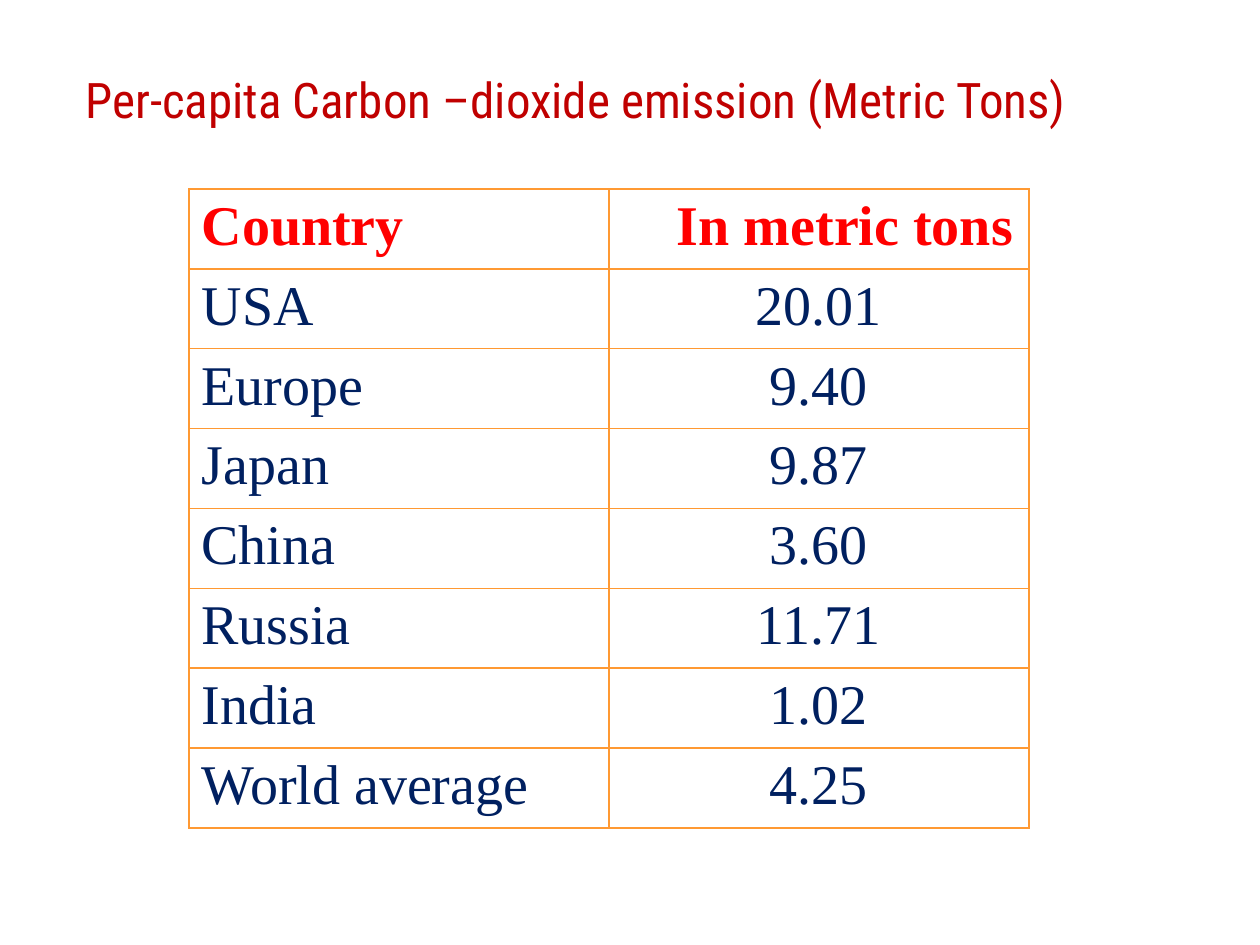
from dataclasses import dataclass
from typing import NamedTuple

from lxml import etree
from pptx import Presentation
from pptx.dml.color import RGBColor
from pptx.enum.text import MSO_AUTO_SIZE, PP_ALIGN
from pptx.oxml.ns import qn
from pptx.util import Emu, Inches, Pt

LEFT, CENTER = PP_ALIGN.LEFT, PP_ALIGN.CENTER
FIT_SHAPE = MSO_AUTO_SIZE.SHAPE_TO_FIT_TEXT
BLANK_LAYOUT = 6
BORDER_SIDES = ("a:lnL", "a:lnR", "a:lnT", "a:lnB")


@dataclass(frozen=True)
class Theme:
    title_font: str = "Roboto Condensed"
    table_font: str = "Times New Roman"
    title_color: str = "C00000"
    header_color: str = "FF0000"
    body_color: str = "002060"
    border_color: str = "FF9933"
    title_size: int = 28
    table_size: int = 32
    border_width: int = 1
    space_before_percent: int = 20


class Area(NamedTuple):
    left: float
    top: float
    width: float
    height: float


class Emission(NamedTuple):
    country: str
    tons: str


class TextStyle(NamedTuple):
    font: str
    size: int
    color: str
    bold: bool = False


THEME = Theme()
TITLE_STYLE = TextStyle(THEME.title_font, THEME.title_size, THEME.title_color)
HEADER_STYLE = TextStyle(THEME.table_font, THEME.table_size, THEME.header_color, True)
BODY_STYLE = TextStyle(THEME.table_font, THEME.table_size, THEME.body_color)

SLIDE_WIDTH, SLIDE_HEIGHT = Inches(10), Inches(7.5)
TITLE_AREA = Area(0.058, 1 / 15, 0.867, 0.076)
TABLE_AREA = Area(0.15, 0.2, 2 / 3, 0.676)
HEADER_INDENT = Inches(0.54)

TITLE = "Per-capita Carbon –dioxide emission (Metric Tons)"
HEADINGS = Emission("Country", "In metric tons")
EMISSIONS = [
    Emission("USA", "20.01"),
    Emission("Europe", "9.40"),
    Emission("Japan", "9.87"),
    Emission("China", "3.60"),
    Emission("Russia", "11.71"),
    Emission("India", "1.02"),
    Emission("World average", "4.25"),
]


def to_lengths(area: Area) -> list[Emu]:
    slide_sides = (SLIDE_WIDTH, SLIDE_HEIGHT) * 2
    return [Emu(round(share * side)) for share, side in zip(area, slide_sides)]


def style_paragraph(paragraph, style: TextStyle, alignment=LEFT) -> None:
    paragraph.alignment = alignment
    for run in paragraph.runs:
        run.font.name = style.font
        run.font.size = Pt(style.size)
        run.font.bold = style.bold
        run.font.color.rgb = RGBColor.from_string(style.color)


def set_space_before(paragraph, percent: int) -> None:
    spacing = etree.SubElement(paragraph._p.get_or_add_pPr(), qn("a:spcBef"))
    etree.SubElement(spacing, qn("a:spcPct"), val=str(percent * 1000))


def draw_borders(cell, color: str, width: int) -> None:
    properties = cell._tc.get_or_add_tcPr()
    for side in BORDER_SIDES:
        line = etree.SubElement(properties, qn(side), w=str(Pt(width)))
        fill = etree.SubElement(line, qn("a:solidFill"))
        etree.SubElement(fill, qn("a:srgbClr"), val=color)


def draw_cell(cell, text: str, style: TextStyle, alignment) -> None:
    cell.text_frame.text = text
    paragraph = cell.text_frame.paragraphs[0]
    style_paragraph(paragraph, style, alignment)
    set_space_before(paragraph, THEME.space_before_percent)
    draw_borders(cell, THEME.border_color, THEME.border_width)
    cell.fill.background()


def draw_title(slide) -> None:
    title = slide.shapes.add_textbox(*to_lengths(TITLE_AREA)).text_frame
    title.word_wrap = True
    title.auto_size = FIT_SHAPE
    title.text = TITLE
    style_paragraph(title.paragraphs[0], TITLE_STYLE)


def draw_emissions(slide) -> None:
    rows = [HEADINGS, *EMISSIONS]
    table = slide.shapes.add_table(
        len(rows), len(HEADINGS), *to_lengths(TABLE_AREA)
    ).table
    table.first_row = table.horz_banding = False
    for row_index, emission in enumerate(rows):
        is_header = row_index == 0
        style = HEADER_STYLE if is_header else BODY_STYLE
        tons_alignment = LEFT if is_header else CENTER
        draw_cell(table.cell(row_index, 0), emission.country, style, LEFT)
        draw_cell(table.cell(row_index, 1), emission.tons, style, tons_alignment)
    table.cell(0, 1).margin_left = HEADER_INDENT


def main() -> None:
    presentation = Presentation()
    presentation.slide_width = SLIDE_WIDTH
    presentation.slide_height = SLIDE_HEIGHT
    slide = presentation.slides.add_slide(presentation.slide_layouts[BLANK_LAYOUT])
    draw_title(slide)
    draw_emissions(slide)
    presentation.save("out.pptx")


if __name__ == "__main__":
    main()
